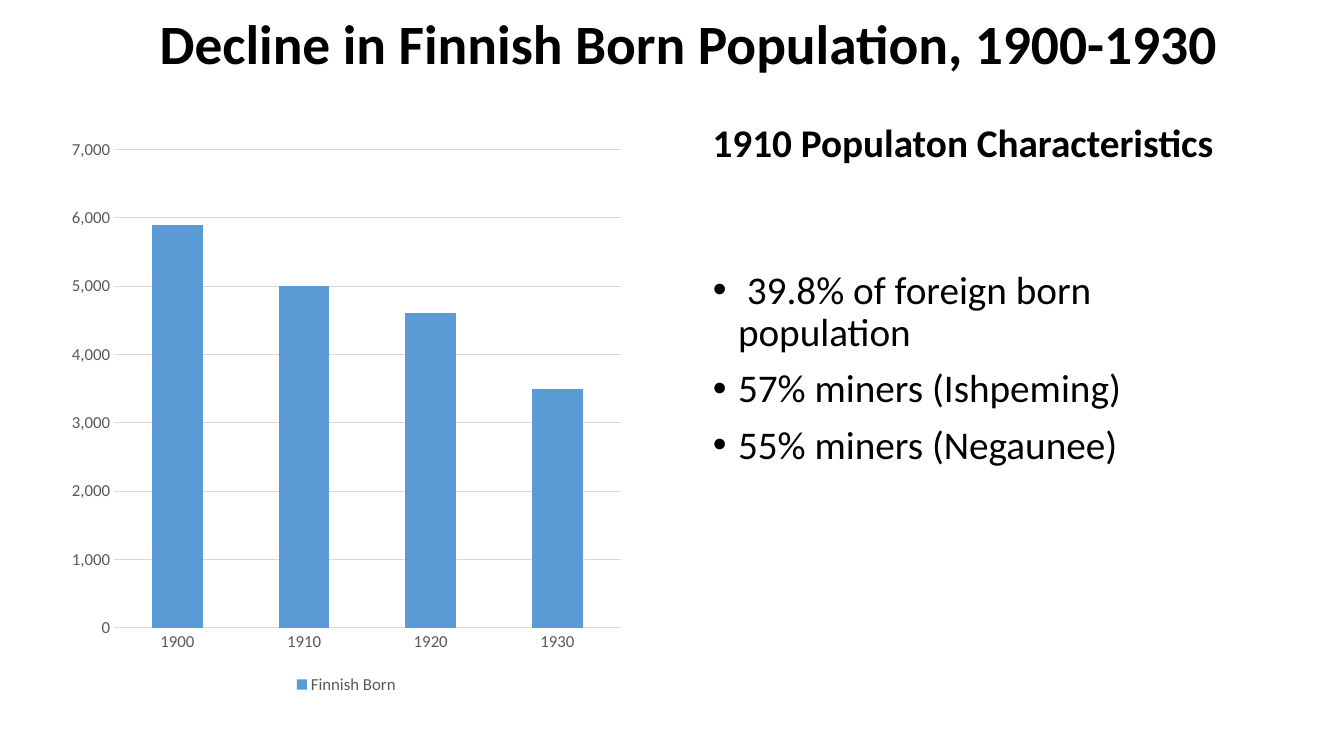
from pptx import Presentation
from pptx.chart.data import CategoryChartData
from pptx.dml.color import RGBColor
from pptx.enum.chart import XL_CHART_TYPE, XL_LEGEND_POSITION, XL_TICK_MARK
from pptx.enum.text import MSO_ANCHOR, MSO_AUTO_SIZE, PP_ALIGN
from pptx.util import Inches, Pt

COLUMN_CLUSTERED = XL_CHART_TYPE.COLUMN_CLUSTERED
LEGEND_BOTTOM = XL_LEGEND_POSITION.BOTTOM
NO_TICK = XL_TICK_MARK.NONE
MIDDLE, TOP = MSO_ANCHOR.MIDDLE, MSO_ANCHOR.TOP
NO_AUTOFIT = MSO_AUTO_SIZE.NONE
CENTER, LEFT = PP_ALIGN.CENTER, PP_ALIGN.LEFT

FONT = "Calibri"
BLACK = RGBColor(0x00, 0x00, 0x00)
GRAY = RGBColor(0x59, 0x59, 0x59)
GRID_GRAY = RGBColor(0xD9, 0xD9, 0xD9)
BLUE = RGBColor(0x5B, 0x9B, 0xD5)

FINNISH_BORN = {"1900": 5900, "1910": 5000, "1920": 4600, "1930": 3500}
CHARACTERISTICS = [
    " 39.8% of foreign born population",
    "57% miners (Ishpeming)",
    "55% miners (Negaunee)",
]


def place(shape, left, top, width, height):
    shape.left, shape.top = Inches(left), Inches(top)
    shape.width, shape.height = Inches(width), Inches(height)


def style_font(font, size, color, bold=False):
    font.name = FONT
    font.size = Pt(size)
    font.color.rgb = color
    font.bold = bold


def fill_text(shape, lines, size, bold=False, align=LEFT, anchor=TOP):
    """Write one paragraph per line and return the paragraphs."""
    frame = shape.text_frame
    frame.word_wrap = True
    frame.auto_size = NO_AUTOFIT
    frame.vertical_anchor = anchor
    frame.text = "\n".join(lines)
    for paragraph in frame.paragraphs:
        paragraph.alignment = align
        style_font(paragraph.font, size, BLACK, bold)
    return frame.paragraphs


def add_title(slide, text):
    title = slide.shapes.title
    place(title, 1.46, 0.1, 10.74, 0.72)
    for paragraph in fill_text(title, [text], 39.6, True, CENTER, MIDDLE):
        paragraph.line_spacing = 0.9


def add_bullets(slide, lines):
    body = slide.placeholders[1]
    place(body, 6.97, 2.63, 5.67, 4.76)
    for paragraph in fill_text(body, lines, 28):
        paragraph.line_spacing = 0.9
        paragraph.space_before = Pt(10)
        properties = paragraph._p.get_or_add_pPr()
        properties.set("marL", str(Inches(0.25)))
        properties.set("indent", str(Inches(-0.25)))


def add_heading(slide, text):
    box = slide.shapes.add_textbox(
        Inches(6.97), Inches(1.12), Inches(5.23), Inches(0.57))
    fill_text(box, [text], 28, True)


def style_axis(axis):
    axis.major_tick_mark = NO_TICK
    axis.minor_tick_mark = NO_TICK
    axis.format.line.fill.background()
    style_font(axis.tick_labels.font, 12, GRAY)


def add_population_chart(slide):
    data = CategoryChartData(number_format="#,##0")
    data.categories = list(FINNISH_BORN)
    data.add_series("Finnish Born", list(FINNISH_BORN.values()))
    chart = slide.shapes.add_chart(
        COLUMN_CLUSTERED, Inches(0.6), Inches(1.27), Inches(5.67), Inches(5.66),
        data).chart
    chart.has_title = False
    style_font(chart.font, 10, BLACK)

    style_axis(chart.category_axis)
    value_axis = chart.value_axis
    style_axis(value_axis)
    value_axis.minimum_scale, value_axis.maximum_scale = 0, 7000
    value_axis.major_unit = 1000
    value_axis.tick_labels.number_format = "#,##0"
    value_axis.tick_labels.number_format_is_linked = False
    grid_line = value_axis.major_gridlines.format.line
    grid_line.color.rgb = GRID_GRAY
    grid_line.width = Pt(0.75)

    plot = chart.plots[0]
    plot.gap_width = 150
    plot.vary_by_categories = False
    fill = plot.series[0].format.fill
    fill.solid()
    fill.fore_color.rgb = BLUE

    chart.has_legend = True
    chart.legend.position = LEGEND_BOTTOM
    chart.legend.include_in_layout = False
    style_font(chart.legend.font, 12, GRAY)


def main():
    presentation = Presentation()
    presentation.slide_width = Inches(13.33)
    presentation.slide_height = Inches(7.5)
    slide = presentation.slides.add_slide(presentation.slide_layouts[1])
    add_title(slide, "Decline in Finnish Born Population, 1900-1930")
    add_population_chart(slide)
    add_bullets(slide, CHARACTERISTICS)
    add_heading(slide, "1910 Populaton Characteristics")
    presentation.save("out.pptx")


if __name__ == "__main__":
    main()
